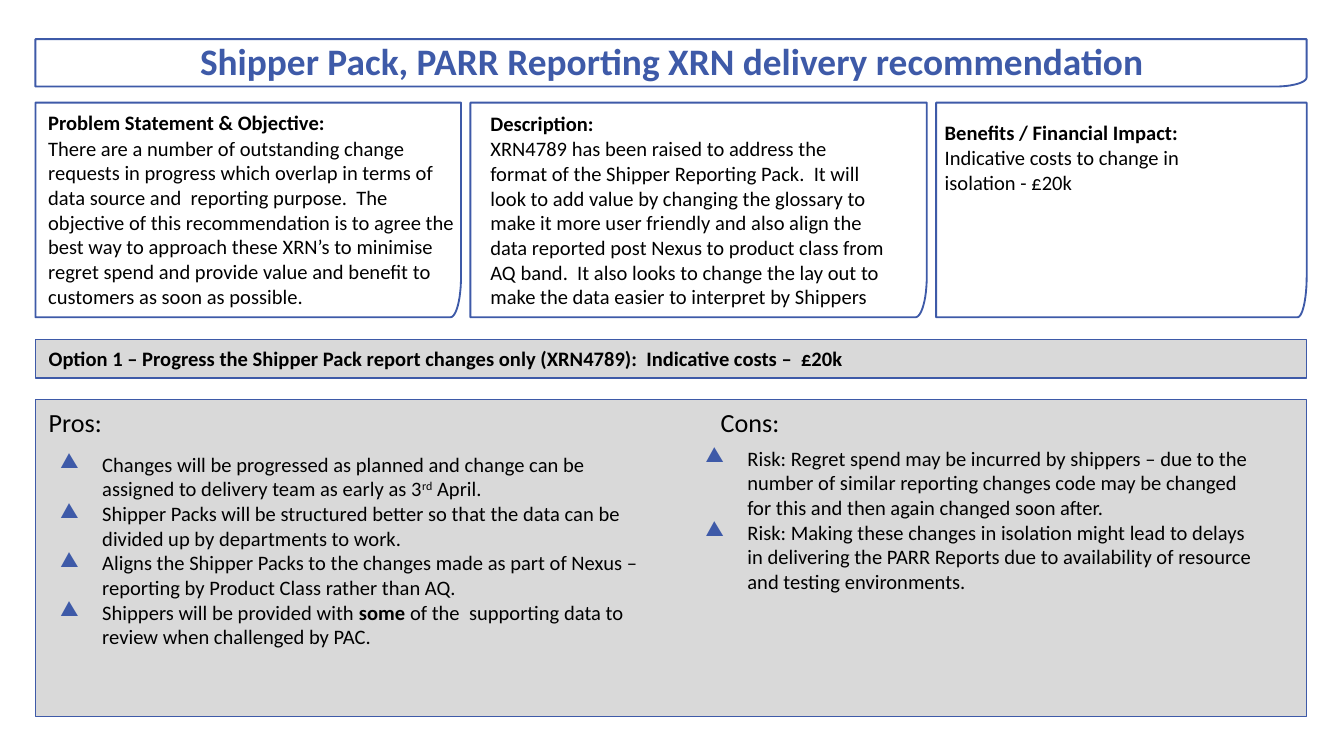
import math

from lxml import etree
from pptx import Presentation
from pptx import util as u
from pptx.dml.color import RGBColor
from pptx.enum import shapes, text
from pptx.oxml import ns

COLORS = {"blue": "3E5AA8", "grey": "D9D9D9", "black": "000000"}
LEFT, WIDTH, GAP = 19, 681, 5
PANEL_TOP, PANEL_HEIGHT = 55, 115
PANEL_WIDTHS = (228, 244.5, 198.5)
BODY = {"size": u.Pt(11), "name": "Calibri", "bold": False}
STRONG = {**BODY, "bold": True}
HEADING = {**BODY, "size": u.Pt(14)}
TITLE = {**STRONG, "size": u.Pt(20)}

NOTES = [
    (18.72, 55.44, 239, "Problem Statement & Objective:",
     "There are a number of outstanding change requests in progress which overlap in terms of "
     "data source and  reporting purpose.  The objective of this recommendation is to agree the "
     "best way to approach these XRN’s to minimise regret spend and provide value and benefit to "
     "customers as soon as possible."),
    (255.6, 55.8, 226, "Description:",
     "XRN4789 has been raised to address the format of the Shipper Reporting Pack.  It will look "
     "to add value by changing the glossary to make it more user friendly and also align the data "
     "reported post Nexus to product class from AQ band.  It also looks to change the lay out to "
     "make the data easier to interpret by Shippers"),
    (499, 60.5, 145, "Benefits / Financial Impact:",
     "Indicative costs to change in isolation - £20k"),
]
PROS = [
    [("Changes will be progressed as planned and change can be assigned to delivery team as early "
      "as 3", BODY), ("rd", BODY, 30), (" April.", BODY)],
    [("Shipper Packs will be structured better so that the data can be divided up by departments "
      "to work.", BODY)],
    [("Aligns the Shipper Packs to the changes made as part of Nexus – reporting by Product Class "
      "rather than AQ.", BODY)],
    [("Shippers will be provided with ", BODY), ("some ", STRONG),
     ("of the  supporting data to review when challenged by PAC.", BODY)],
]
CONS = [
    [("Risk: Regret spend may be incurred by shippers – due to the number of similar reporting "
      "changes code may be changed for this and then again changed soon after.", BODY)],
    [("Risk: Making these changes in isolation might lead to delays in delivering the PARR Reports "
      "due to availability of resource and testing environments.", BODY)],
]


def color(name):
    return RGBColor.from_string(COLORS[name])


def add_span(para, words, style, raised=0, ink="black"):
    span = para.add_run()
    span.text = words
    for key, value in style.items():
        setattr(span.font, key, value)
    span.font.color.rgb = color(ink)
    if raised:
        span._r.get_or_add_rPr().set("baseline", str(raised * 1000))


def add_bullet(para):
    props = para._p.get_or_add_pPr()
    props.set("marL", str(u.Pt(22.5)))
    props.set("indent", str(u.Pt(-22.5)))
    tint = etree.SubElement(props, ns.qn("a:buClr"))
    etree.SubElement(tint, ns.qn("a:srgbClr"), val=COLORS["blue"])
    etree.SubElement(props, ns.qn("a:buChar"), char="▲")


def add_tab_stop(para, position):
    stops = etree.SubElement(para._p.get_or_add_pPr(), ns.qn("a:tabLst"))
    etree.SubElement(stops, ns.qn("a:tab"), pos=str(u.Pt(position)), algn="l")


def add_text(page, left, top, width, height, paras, bullets=False, after=0):
    box = page.shapes.add_textbox(u.Pt(left), u.Pt(top), u.Pt(width), u.Pt(height))
    frame = box.text_frame
    frame.word_wrap = True
    for index, spans in enumerate(paras):
        para = frame.paragraphs[0] if index == 0 else frame.add_paragraph()
        para.space_after = u.Pt(after)
        if bullets:
            add_bullet(para)
        for span in spans:
            add_span(para, *span)
    return frame


def add_panel(page, left, top, width, height):
    curve_x, curve_y = 0.025 * width, 0.19 * height
    right, bottom = left + width, top + height
    angles = [math.radians(step * 7.5) for step in range(13)]
    corner = [(right - curve_x * (1 - math.cos(angle)),
               bottom - curve_y * (1 - math.sin(angle))) for angle in angles]
    points = [(right, top), *corner, (left, bottom)]
    outline = page.shapes.build_freeform(u.Pt(left), u.Pt(top))
    outline.add_line_segments([(u.Pt(x), u.Pt(y)) for x, y in points], close=True)
    panel = outline.convert_to_shape()
    panel.shadow.inherit = False
    panel.fill.background()
    panel.line.color.rgb = color("blue")
    panel.line.width = u.Pt(1)


def add_band(page, top, height, words, style):
    band = page.shapes.add_shape(shapes.MSO_SHAPE.RECTANGLE, u.Pt(LEFT), u.Pt(top),
                                 u.Pt(WIDTH), u.Pt(height))
    band.shadow.inherit = False
    band.fill.solid()
    band.fill.fore_color.rgb = color("grey")
    band.line.color.rgb = color("blue")
    band.line.width = u.Pt(0.75)
    frame = band.text_frame
    frame.word_wrap = True
    frame.vertical_anchor = text.MSO_ANCHOR.TOP
    para = frame.paragraphs[0]
    para.alignment = text.PP_ALIGN.LEFT
    add_span(para, words, style)
    return para


def main():
    deck = Presentation()
    deck.slide_width, deck.slide_height = u.Pt(720), u.Pt(405)
    page = deck.slides.add_slide(deck.slide_layouts[6])

    heading = [("Shipper Pack, PARR Reporting XRN delivery recommendation", TITLE, 0, "blue")]
    frame = add_text(page, 36, 10, 648, 45, [heading])
    frame.vertical_anchor = text.MSO_ANCHOR.MIDDLE
    frame.paragraphs[0].alignment = text.PP_ALIGN.CENTER
    add_panel(page, LEFT, 21, WIDTH, 25.4)

    left = LEFT
    for width in PANEL_WIDTHS:
        add_panel(page, left, PANEL_TOP, width, PANEL_HEIGHT)
        left += width + GAP
    for left, top, width, label, words in NOTES:
        add_text(page, left, top, width, PANEL_HEIGHT,
                 [[(label, STRONG)], [(words, BODY)]], after=0.5)

    add_band(page, 182, 20.5,
             "Option 1 – Progress the Shipper Pack report changes only (XRN4789):  "
             "Indicative costs –  £20k", STRONG)
    add_tab_stop(add_band(page, 214, 170, "Pros:\tCons:", HEADING), 360)
    add_text(page, 25.2, 238.4, 329, 127, PROS, bullets=True)
    add_text(page, 370.8, 235.2, 312, 109, CONS, bullets=True)

    deck.save("out.pptx")


if __name__ == "__main__":
    main()
